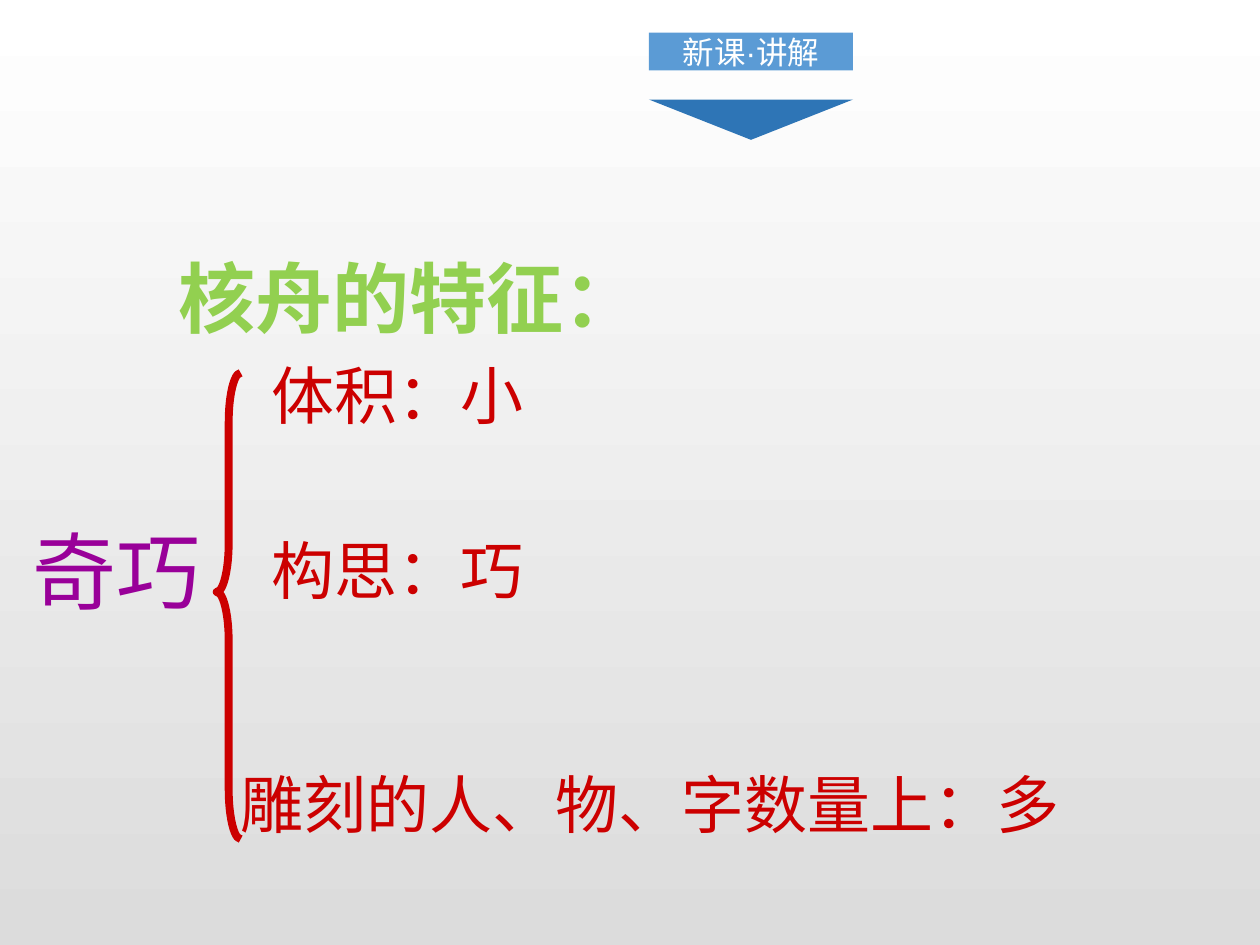
import pptx
import pptx.dml.color
import pptx.enum.lang
import pptx.enum.shapes
import pptx.enum.text
import pptx.util

SHAPE = pptx.enum.shapes.MSO_SHAPE
ALIGN = pptx.enum.text.PP_ALIGN
ANCHOR = pptx.enum.text.MSO_ANCHOR
RED = "CC0000"

prs = pptx.Presentation()
prs.slide_width = pptx.util.Inches(10)
prs.slide_height = pptx.util.Inches(7.5)
s = prs.slides.add_slide(prs.slide_layouts[6])

# Grid of 100 columns by 75 rows
COL = prs.slide_width / 100
ROW = prs.slide_height / 75


def rgb(color):
    return pptx.dml.color.RGBColor.from_string(color)


def write(sp, text, size, color, font="Times New Roman", bold=False, align=ALIGN.LEFT):
    tf = sp.text_frame
    tf.word_wrap = True
    p = tf.paragraphs[0]
    p.alignment = align
    r = p.add_run()
    r.text = text
    r.font.name = font
    r.font.size = pptx.util.Pt(size)
    r.font.bold = bold
    r.font.color.rgb = rgb(color)
    r.font.language_id = pptx.enum.lang.MSO_LANGUAGE_ID.SIMPLIFIED_CHINESE
    return tf


# Background: white at the top to grey at the bottom
fill = s.background.fill
fill.gradient()
fill.gradient_angle = 270
for stop, position, color in zip(fill.gradient_stops, (0, 1), ("FFFFFF", "DCDCDC")):
    stop.position = position
    stop.color.rgb = rgb(color)

# Heading, keyword and the three features
for text, x, y, w, h, style in (
    ("体积：小", 20.6, 27.8, 61.7, 7.1, {"size": 36, "color": RED}),
    ("构思：巧", 20.6, 41.7, 58.3, 7.1, {"size": 36, "color": RED}),
    ("雕刻的人、物、字数量上：多", 18.1, 60.3, 89.2, 7.1, {"size": 36, "color": RED}),
    ("奇巧", 1.6, 40.7, 20.8, 9.1, {"size": 48, "color": "990099"}),
    ("核舟的特征：", 13.2, 19.4, 40, 8.4,
     {"size": 44, "color": "92D050", "font": "Arial", "bold": True}),
):
    sp = s.shapes.add_textbox(int(x * COL), int(y * ROW), int(w * COL), int(h * ROW))
    write(sp, text, **style)

# Brace, section label and the arrow under it
parts = []
for kind, x, y, w, h, color in (
    (SHAPE.LEFT_BRACE, 17.2, 29.6, 1.9, 37, None),
    (SHAPE.RECTANGLE, 51.5, 2.6, 16.2, 3, "5B9BD5"),
    (SHAPE.ISOSCELES_TRIANGLE, 51.5, 7.9, 16.2, 3.2, "2E75B6"),
):
    sp = s.shapes.add_shape(kind, int(x * COL), int(y * ROW), int(w * COL), int(h * ROW))
    sp.shadow.inherit = False
    if color:
        sp.fill.solid()
        sp.fill.fore_color.rgb = rgb(color)
        sp.line.fill.background()
    else:
        sp.fill.background()
    parts.append(sp)
brace, label, arrow = parts

brace.adjustments[0] = 2.07
brace.adjustments[1] = 0.47
brace.line.color.rgb = rgb(RED)
brace.line.width = pptx.util.Pt(4.5)

tf = write(label, "新课·讲解", 18, "FFFFFF", font="Arial", align=ALIGN.CENTER)
tf.vertical_anchor = ANCHOR.MIDDLE
tf.margin_left = tf.margin_right = tf.margin_top = tf.margin_bottom = 0

arrow.rotation = 180

prs.save("out.pptx")
